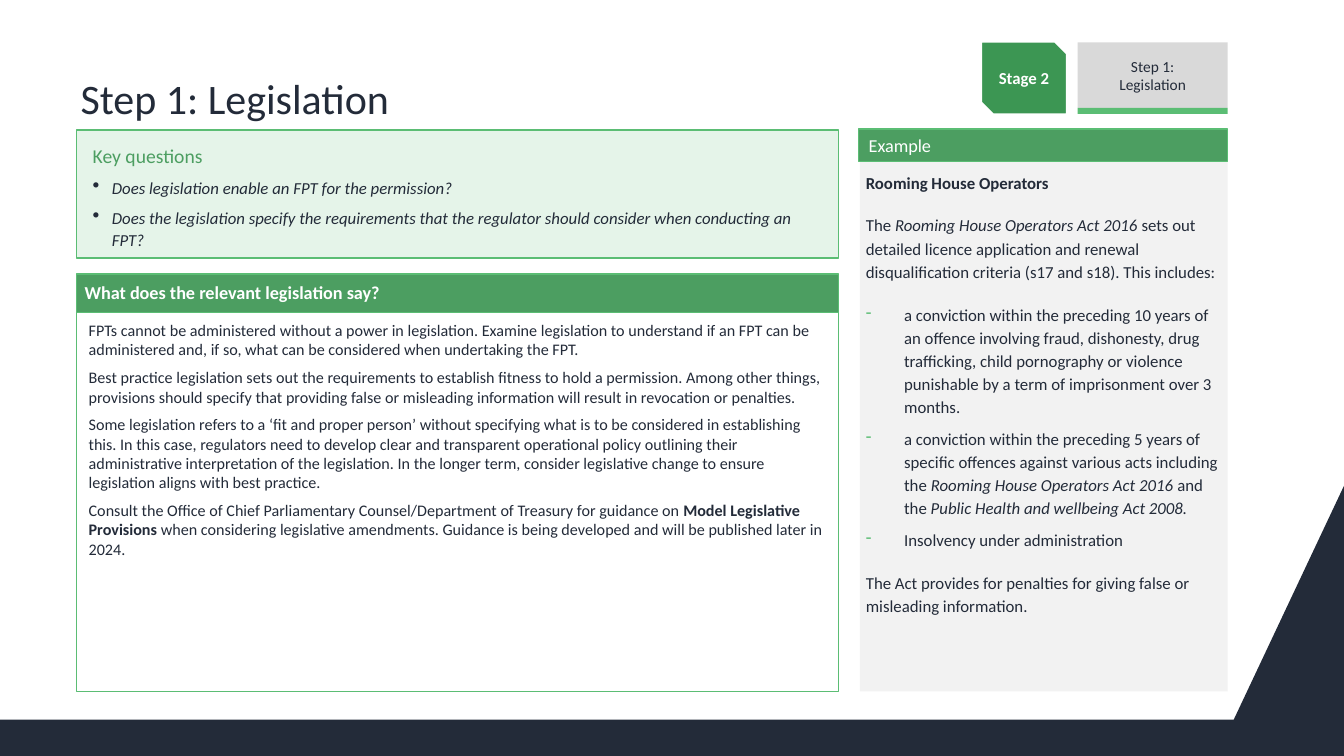
from dataclasses import dataclass
from typing import Optional

from lxml import etree
from pptx import Presentation
from pptx import util as u
from pptx.dml.color import RGBColor
from pptx.enum import shapes, text
from pptx.oxml import ns

NAVY = RGBColor(0x23, 0x2B, 0x39)
WHITE = RGBColor(0xFF, 0xFF, 0xFF)
GREEN = RGBColor(0x4C, 0x9E, 0x61)
DEEP_GREEN = RGBColor(0x3C, 0x96, 0x53)
BRIGHT_GREEN = RGBColor(0x5B, 0xBD, 0x74)
PALE_GREEN = RGBColor(0xE5, 0xF4, 0xE9)
PALE_GREY = RGBColor(0xF2, 0xF2, 0xF2)
GREY = RGBColor(0xD9, 0xD9, 0xD9)

FONT = "Calibri"
RECT = shapes.MSO_SHAPE.RECTANGLE
SNIPPED = shapes.MSO_SHAPE.SNIP_2_DIAG_RECTANGLE
TOP, MIDDLE, BOTTOM = (
    text.MSO_ANCHOR.TOP, text.MSO_ANCHOR.MIDDLE, text.MSO_ANCHOR.BOTTOM)
LEFT, CENTER = text.PP_ALIGN.LEFT, text.PP_ALIGN.CENTER


@dataclass(frozen=True)
class Span:
    words: str
    bold: bool = False
    italic: bool = False


@dataclass(frozen=True)
class Bullet:
    mark: str
    indent: float
    color: Optional[RGBColor] = None
    percent: int = 100


@dataclass(frozen=True)
class Para:
    spans: tuple[Span, ...]
    size: float
    color: RGBColor = NAVY
    align: text.PP_ALIGN = LEFT
    spacing: float = 1.0
    before: float = 0
    after: float = 0
    bullet: Optional[Bullet] = None


@dataclass(frozen=True)
class Box:
    left: float
    top: float
    width: float
    height: float
    fill: Optional[RGBColor] = None
    line: Optional[RGBColor] = None
    weight: float = 1
    kind: shapes.MSO_SHAPE = RECT
    anchor: text.MSO_ANCHOR = MIDDLE
    insets: tuple[float, float, float, float] = (7.2, 3.6, 7.2, 3.6)
    paras: tuple[Para, ...] = ()


DASH = Bullet("-", 27.36, BRIGHT_GREEN)
DOT = Bullet("•", 13.68, percent=120)


def example(*spans: Span, after: float = 8, bullet: Optional[Bullet] = None) -> Para:
    return Para(spans, 12, spacing=1.15, before=6, after=after, bullet=bullet)


def guidance(*spans: Span) -> Para:
    return Para(spans, 11.5, after=6)


def question(words: str) -> Para:
    return Para((Span(words, italic=True),), 12, spacing=1.07, after=6, bullet=DOT)


TITLE = Box(54.72, 10.8, 823, 81.36, anchor=BOTTOM, insets=(2.88, 3.6, 2.88, 3.6),
            paras=(Para((Span("Step 1: Legislation"),), 30, spacing=0.9),))

EXAMPLE_BODY = Box(
    614.16, 115.2, 262.8, 378.72, PALE_GREY, anchor=TOP,
    insets=(4.32, 5.76, 4.32, 5.76),
    paras=(
        example(Span("Rooming House Operators", bold=True)),
        example(
            Span("The "),
            Span("Rooming House Operators Act 2016 ", italic=True),
            Span("sets out detailed licence application and renewal disqualification "
                 "criteria (s17 and s18). This includes:")),
        example(
            Span("a conviction within the preceding 10 years of an offence involving "
                 "fraud, dishonesty, drug trafficking, child pornography or violence "
                 "punishable by a term of imprisonment over 3 months."),
            after=0, bullet=DASH),
        example(
            Span("a conviction within the preceding 5 years of specific offences "
                 "against various acts including the "),
            Span("Rooming House Operators Act 2016 ", italic=True),
            Span("and the"),
            Span(" Public Health and wellbeing Act 2008.", italic=True),
            after=0, bullet=DASH),
        example(Span("Insolvency under administration"), bullet=DASH),
        example(Span("The Act provides for penalties for giving false or misleading "
                     "information.")),
    ))

LEGISLATION_HEADING = Box(
    54.72, 195.84, 544.32, 27.36, GREEN, BRIGHT_GREEN,
    insets=(5.76, 2.88, 5.76, 2.88),
    paras=(Para((Span("What does the relevant legislation say?", bold=True),),
                13, WHITE, spacing=0.9),))

LEGISLATION_BODY = Box(
    54.72, 223.2, 544.32, 270.72, WHITE, BRIGHT_GREEN, anchor=TOP,
    insets=(8.64, 5.76, 8.64, 5.76),
    paras=(
        guidance(Span(
            "FPTs cannot be administered without a power in legislation. Examine "
            "legislation to understand if an FPT can be administered and, if so, what "
            "can be considered when undertaking the FPT.")),
        guidance(Span(
            "Best practice legislation sets out the requirements to establish fitness "
            "to hold a permission. Among other things, provisions should specify that "
            "providing false or misleading information will result in revocation or "
            "penalties.")),
        guidance(Span(
            "Some legislation refers to a ‘fit and proper person’ without specifying "
            "what is to be considered in establishing this. In this case, regulators "
            "need to develop clear and transparent operational policy outlining their "
            "administrative interpretation of the legislation. In the longer term, "
            "consider legislative change to ensure legislation aligns with best "
            "practice.")),
        guidance(
            Span("Consult the Office of Chief Parliamentary Counsel/Department of "
                 "Treasury for guidance on "),
            Span("Model Legislative Provisions", bold=True),
            Span(" when considering legislative amendments. Guidance is being "
                 "developed and will be published later in 2024.")),
    ))

STAGE = Box(700.56, 29.52, 61.92, 52.56, DEEP_GREEN, WHITE, 2, SNIPPED,
            paras=(Para((Span("Stage 2", bold=True),), 12, WHITE, CENTER),))
STEP = Box(769.68, 30.24, 107.28, 46.8, GREY,
           paras=tuple(Para((Span(words),), 11, align=CENTER)
                       for words in ("Step 1:", "Legislation")))
STEP_BAR = Box(769.68, 77.04, 107.28, 4.32, BRIGHT_GREEN)

KEY_QUESTIONS = Box(
    54.72, 92.88, 544.32, 91.44, PALE_GREEN, BRIGHT_GREEN,
    insets=(11.52, 8.64, 11.52, 5.76),
    paras=(
        Para((Span("Key questions"),), 14, GREEN, spacing=1.07, after=6),
        question("Does legislation enable an FPT for the permission?"),
        question("Does the legislation specify the requirements that the regulator "
                 "should consider when conducting an FPT?"),
    ))

EXAMPLE_HEADING = Box(613.44, 92.16, 263.52, 23.04, GREEN, BRIGHT_GREEN, 0.75,
                      paras=(Para((Span("Example"),), 13, WHITE),))

BOXES = (TITLE, EXAMPLE_BODY, LEGISLATION_HEADING, LEGISLATION_BODY, STAGE, STEP,
         STEP_BAR, KEY_QUESTIONS, EXAMPLE_HEADING)
FOOTER = ((881.28, 514), (0, 514), (0, 540), (960, 540), (960, 347))


def add_bullet(para, bullet: Bullet) -> None:
    props = para._p.get_or_add_pPr()
    props.set("marL", str(u.Pt(bullet.indent)))
    props.set("indent", str(-u.Pt(bullet.indent)))
    if bullet.color is not None:
        color = etree.SubElement(props, ns.qn("a:buClr"))
        etree.SubElement(color, ns.qn("a:srgbClr"), val=str(bullet.color))
    etree.SubElement(props, ns.qn("a:buSzPct"), val=str(bullet.percent * 1000))
    etree.SubElement(props, ns.qn("a:buChar"), char=bullet.mark)


def write_para(para, content: Para) -> None:
    para.alignment = content.align
    para.line_spacing = content.spacing
    para.space_before = u.Pt(content.before)
    para.space_after = u.Pt(content.after)
    if content.bullet:
        add_bullet(para, content.bullet)
    for span in content.spans:
        run = para.add_run()
        run.text = span.words
        run.font.name, run.font.size = FONT, u.Pt(content.size)
        run.font.bold, run.font.italic = span.bold, span.italic
        run.font.color.rgb = content.color


def add_box(page, box: Box) -> None:
    place = [u.Pt(n) for n in (box.left, box.top, box.width, box.height)]
    if box.fill is None:
        shape = page.shapes.add_textbox(*place)
    else:
        shape = page.shapes.add_shape(box.kind, *place)
        shape.shadow.inherit = False
        shape.fill.solid()
        shape.fill.fore_color.rgb = box.fill
        if box.line is None:
            shape.line.fill.background()
        else:
            shape.line.color.rgb = box.line
            shape.line.width = u.Pt(box.weight)
    frame = shape.text_frame
    frame.word_wrap = True
    frame.vertical_anchor = box.anchor
    (frame.margin_left, frame.margin_top,
     frame.margin_right, frame.margin_bottom) = [u.Pt(n) for n in box.insets]
    for index, content in enumerate(box.paras):
        write_para(frame.add_paragraph() if index else frame.paragraphs[0], content)


def add_footer(page) -> None:
    start, *rest = [(u.Pt(x), u.Pt(y)) for x, y in FOOTER]
    builder = page.shapes.build_freeform(*start)
    builder.add_line_segments(rest)
    footer = builder.convert_to_shape()
    footer.shadow.inherit = False
    footer.fill.solid()
    footer.fill.fore_color.rgb = NAVY
    footer.line.fill.background()


def main() -> None:
    deck = Presentation()
    deck.slide_width, deck.slide_height = u.Pt(960), u.Pt(540)
    page = deck.slides.add_slide(deck.slide_layouts[6])
    add_footer(page)
    for box in BOXES:
        add_box(page, box)
    deck.save("out.pptx")


if __name__ == "__main__":
    main()
